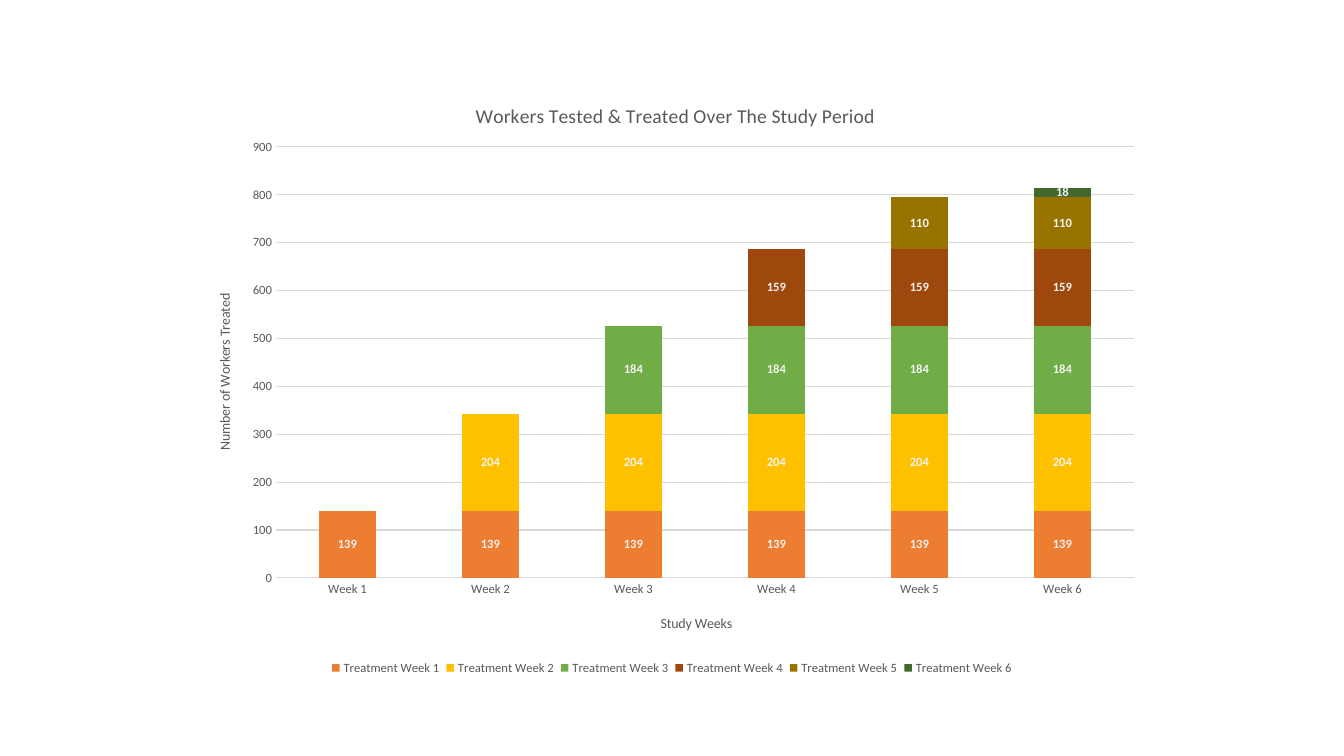
from dataclasses import dataclass

from lxml import etree
from pptx import Presentation
from pptx import util as u
from pptx.chart.data import CategoryChartData
from pptx.dml.color import RGBColor
from pptx.enum import chart as ch
from pptx.oxml.ns import qn

PX = 914400 / 100.8
SLIDE = (1344, 756)
CHART = (191, 76, 964, 604)
TREATED = [139, 204, 184, 159, 110, 18]


@dataclass(frozen=True)
class Theme:
    font: str = "Calibri"
    text: str = "595959"
    label: str = "F2F2F2"
    grid: str = "D9D9D9"
    title_size: int = 14
    axis_title_size: int = 10
    small_size: int = 9
    series: tuple = ("ED7D31", "FFC000", "70AD47", "9E480E", "997300", "43682B")


THEME = Theme()


def px(n):
    return u.Emu(round(n * PX))


def style_font(font, size, color=THEME.text, bold=False):
    font.name = THEME.font
    font.size = u.Pt(size)
    font.bold = bold
    font.color.rgb = RGBColor.from_string(color)


def style_line(line):
    line.color.rgb = RGBColor.from_string(THEME.grid)
    line.width = u.Pt(0.75)


def place(el, index, left, top, width=None, height=None, inner=False):
    """Fix a chart part at slide px; index is where its layout element goes."""
    for old in el.findall(qn("c:layout")):
        el.remove(old)
    layout = etree.Element(qn("c:layout"))
    manual = etree.SubElement(layout, qn("c:manualLayout"))
    x, y, w, h = CHART
    settings = [("layoutTarget", "inner")] if inner else []
    settings += [("xMode", "edge"), ("yMode", "edge"),
                 ("x", (left - x) / w), ("y", (top - y) / h)]
    if width:
        settings += [("w", width / w), ("h", height / h)]
    for tag, val in settings:
        etree.SubElement(manual, qn("c:" + tag)).set("val", str(val))
    el.insert(index, layout)


def add_title(title, wording, size, left, top, rotation=0):
    tf = title.text_frame
    r = tf.paragraphs[0].add_run()
    r.text = wording
    style_font(r.font, size)
    tf._txBody.bodyPr.set("rot", str(rotation * 60000))
    place(title._element, 1, left, top)


def style_axis(axis):
    axis.major_tick_mark = axis.minor_tick_mark = ch.XL_TICK_MARK.NONE
    style_font(axis.tick_labels.font, THEME.small_size)


def style_series(series, color):
    series.format.fill.solid()
    series.format.fill.fore_color.rgb = RGBColor.from_string(color)
    series.invert_if_negative = False
    labels = series.data_labels
    labels.show_value = True
    labels.position = ch.XL_LABEL_POSITION.CENTER
    style_font(labels.font, THEME.small_size, THEME.label, True)


def treatment_data():
    """Each weekly group appears from its own week onwards."""
    weeks = len(TREATED)
    data = CategoryChartData()
    data.categories = [f"Week {n + 1}" for n in range(weeks)]
    for n, count in enumerate(TREATED):
        data.add_series(f"Treatment Week {n + 1}",
                        [None] * n + [count] * (weeks - n))
    return data


def add_treatment_chart(s):
    chart = s.shapes.add_chart(ch.XL_CHART_TYPE.COLUMN_STACKED,
                               *map(px, CHART), treatment_data()).chart
    chart.font.name = THEME.font
    chart.font.size = u.Pt(10)

    plot = chart.plots[0]
    plot.gap_width, plot.overlap = 150, 100
    plot.vary_by_categories = False
    for series, color in zip(plot.series, THEME.series):
        style_series(series, color)
    plot_area = chart._chartSpace.chart.plotArea
    place(plot_area, 0, 276, 147, 858, 431, inner=True)

    weeks, workers = chart.category_axis, chart.value_axis
    style_axis(weeks)
    style_axis(workers)
    style_line(weeks.format.line)
    workers.format.line.fill.background()
    style_line(workers.major_gridlines.format.line)
    workers.minimum_scale, workers.maximum_scale = 0, 900
    workers.major_unit = 100

    chart.has_title = True
    add_title(chart.chart_title, "Workers Tested & Treated Over The Study Period",
              THEME.title_size, 472, 99)
    add_title(weeks.axis_title, "Study Weeks", THEME.axis_title_size, 658, 612)
    add_title(workers.axis_title, "Number of Workers Treated",
              THEME.axis_title_size, 213, 291, rotation=-90)

    chart.has_legend = True
    legend = chart.legend
    legend.position = ch.XL_LEGEND_POSITION.BOTTOM
    legend.include_in_layout = False
    style_font(legend.font, THEME.small_size)
    place(legend._element, 1, 325, 657, 694, 22)


def main():
    prs = Presentation()
    prs.slide_width, prs.slide_height = map(px, SLIDE)
    s = prs.slides.add_slide(prs.slide_layouts[6])
    add_treatment_chart(s)
    prs.save("out.pptx")


if __name__ == "__main__":
    main()
